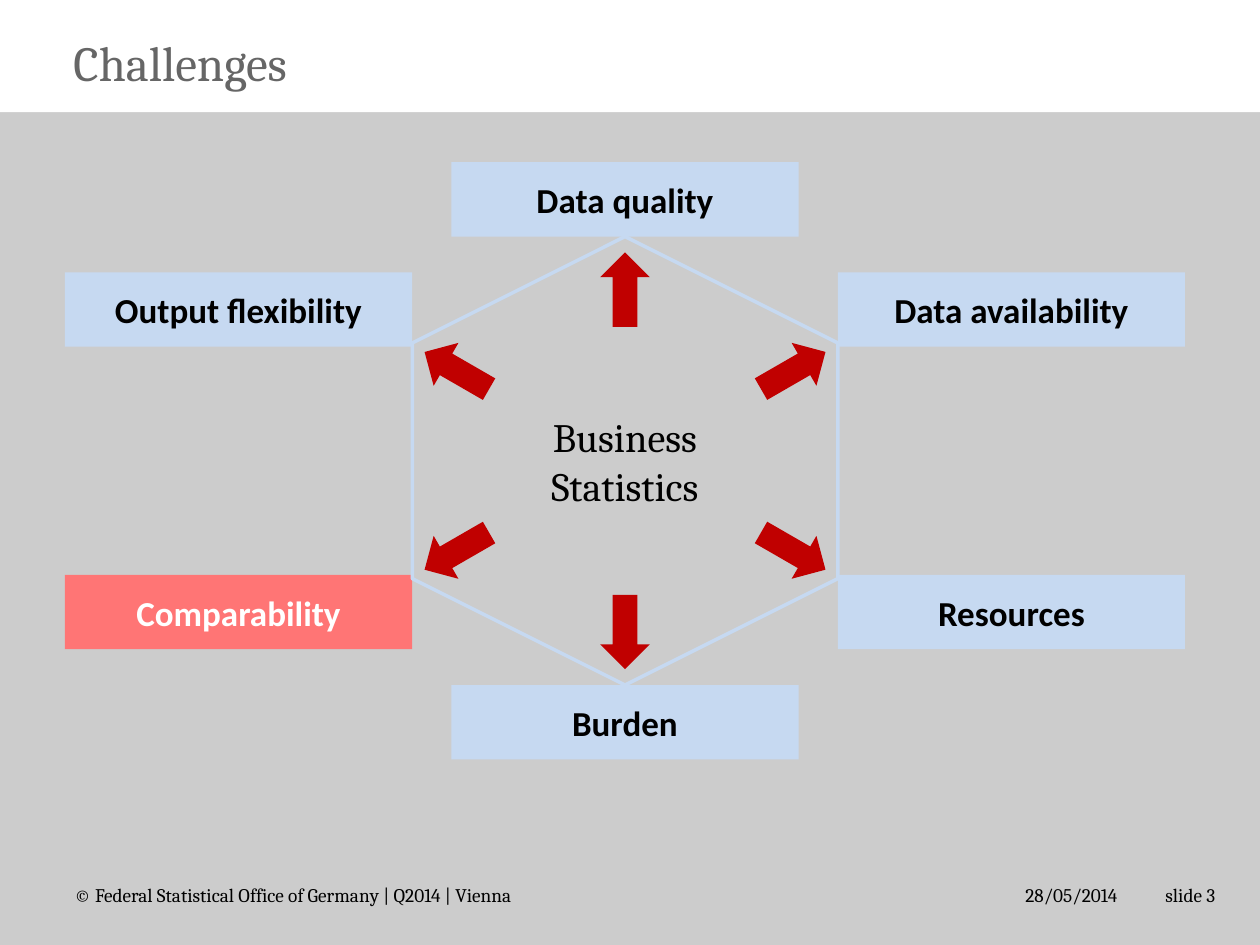
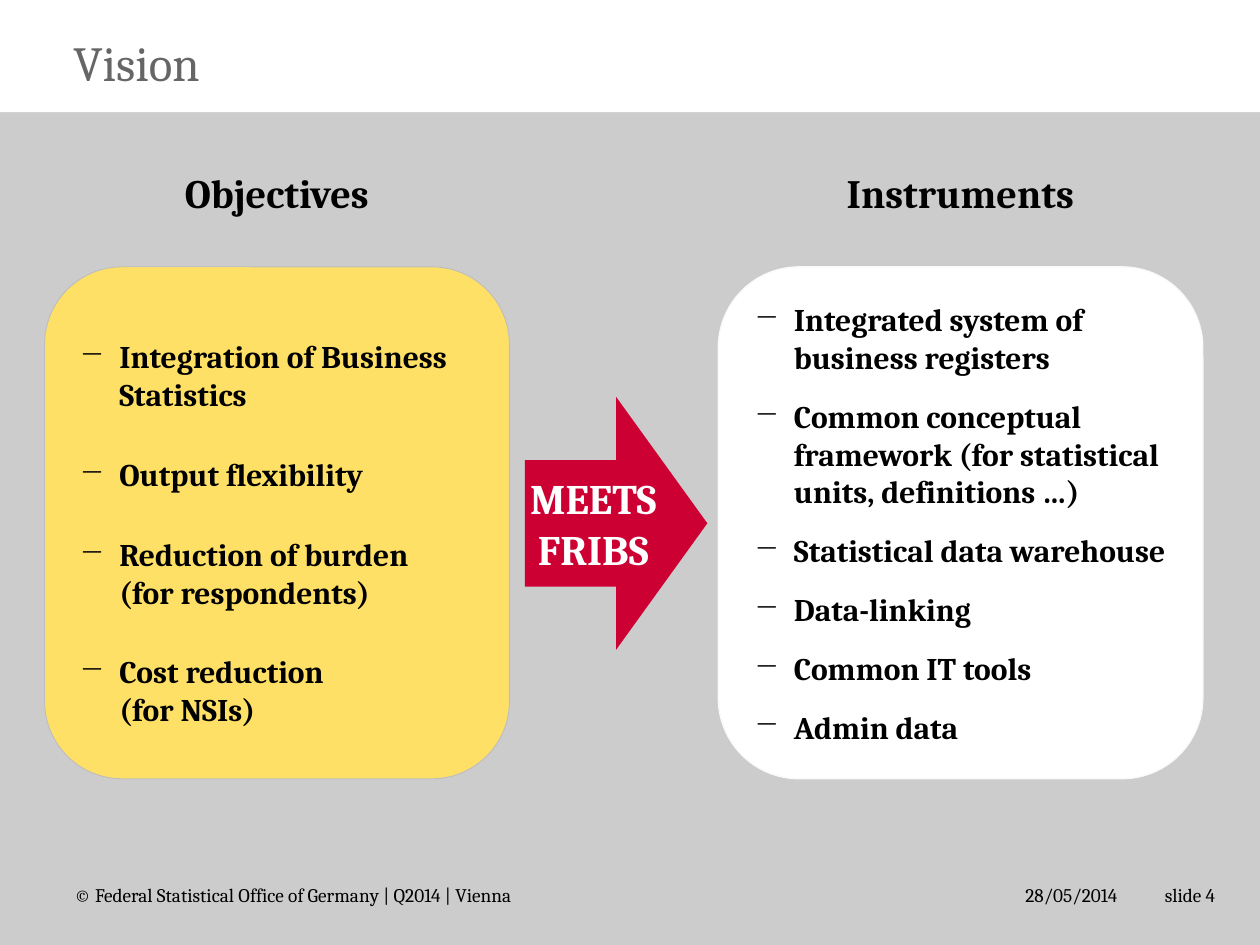
"""Build the Challenges and Vision slides on business statistics."""
from dataclasses import dataclass

import lxml.etree
import pptx
import pptx.dml.color
import pptx.enum.shapes
import pptx.enum.text
import pptx.oxml.ns
import pptx.util

Cm = pptx.util.Cm
Pt = pptx.util.Pt
Shape = pptx.enum.shapes.MSO_SHAPE
Align = pptx.enum.text.PP_ALIGN
Anchor = pptx.enum.text.MSO_ANCHOR


@dataclass(frozen=True)
class Theme:
    """Colours, fonts and type sizes of the slides."""

    background: str = "CCCCCC"
    white: str = "FFFFFF"
    black: str = "000000"
    title: str = "666666"
    topic: str = "C6D9F1"
    highlight: str = "FF7575"
    spoke: str = "C00000"
    objectives: str = "FFE066"
    objectives_edge: str = "BDBDBD"
    instruments_edge: str = "F9F9F9"
    meets: str = "CC0033"
    serif: str = "Cambria"
    sans: str = "Calibri"
    title_size: int = 28
    meets_size: int = 24
    heading_size: int = 23
    topic_size: int = 20
    list_size: int = 18
    footer_size: int = 11


THEME = Theme()
COPYRIGHT = "© Federal Statistical Office of Germany | Q2014 | Vienna"
DATE = "28/05/2014"

HUB_X, HUB_Y = 12.6, 9.29
TOPIC_SIZE = (7.0, 1.5)
SPOKE_SIZE = (1.0, 1.5)
HEXAGON_SIZE = (9.04, 8.58)
TOPICS = [
    ("Data quality", 0, -1),
    ("Data availability", 1, -1),
    ("Resources", 1, 1),
    ("Burden", 0, 1),
    ("Comparability", -1, 1),
    ("Output flexibility", -1, -1),
]
OBJECTIVES = [
    "Integration of Business Statistics",
    "Output flexibility",
    "Reduction of burden\n(for respondents)",
    "Cost reduction\n(for NSIs)",
]
INSTRUMENTS = [
    "Integrated system of business registers",
    "Common conceptual framework (for statistical units, definitions …)",
    "Statistical data warehouse",
    "Data-linking",
    "Common IT tools",
    "Admin data",
]


def rgb(value):
    """Return the colour for a hex string."""
    return pptx.dml.color.RGBColor.from_string(value)


def add_dash(paragraph, indent=0.8):
    """Give a paragraph a hanging dash."""
    properties = paragraph._p.get_or_add_pPr()
    properties.set("marL", str(Cm(indent)))
    properties.set("indent", str(-Cm(indent)))
    dash = lxml.etree.SubElement(properties, pptx.oxml.ns.qn("a:buChar"))
    dash.set("char", "−")


def write(shape, *paragraphs, size, font=THEME.serif, color=THEME.black,
          bold=False, align=Align.LEFT, anchor=Anchor.TOP,
          insets=(0, 0, 0, 0), gap=0, dashed=False):
    """Fill a shape with formatted paragraphs."""
    frame = shape.text_frame
    frame.word_wrap = True
    frame.auto_size = pptx.enum.text.MSO_AUTO_SIZE.NONE
    frame.vertical_anchor = anchor
    (frame.margin_left, frame.margin_top,
     frame.margin_right, frame.margin_bottom) = map(Cm, insets)
    for index, text in enumerate(paragraphs):
        paragraph = frame.add_paragraph() if index else frame.paragraphs[0]
        paragraph.text = text
        paragraph.alignment = align
        paragraph.space_before = Pt(gap if index else 0)
        if dashed:
            add_dash(paragraph)
        for run in paragraph.runs:
            run.font.name = font
            run.font.size = Pt(size)
            run.font.bold = bold
            run.font.color.rgb = rgb(color)


def add_label(slide, box, text, **text_format):
    """Add a text box; box is left, top, width, height in cm."""
    label = slide.shapes.add_textbox(*map(Cm, box))
    write(label, text, **text_format)


def add_figure(slide, kind, box, fill=None, line=None, line_width=1.0):
    """Add a flat preset shape; box is in cm."""
    figure = slide.shapes.add_shape(kind, *map(Cm, box))
    figure.shadow.inherit = False
    if fill:
        figure.fill.solid()
        figure.fill.fore_color.rgb = rgb(fill)
    else:
        figure.fill.background()
    if line:
        figure.line.color.rgb = rgb(line)
        figure.line.width = Pt(line_width)
    else:
        figure.line.fill.background()
    return figure


def around_hub(dx, dy, size):
    """Return the box of the given size centred at an offset from the hub."""
    width, height = size
    return HUB_X + dx - width / 2, HUB_Y + dy - height / 2, width, height


def add_page(deck, title, number):
    """Add a slide with band, title and footer."""
    slide = deck.slides.add_slide(deck.slide_layouts[5])
    slide.background.fill.solid()
    slide.background.fill.fore_color.rgb = rgb(THEME.background)
    band = add_figure(slide, Shape.RECTANGLE, (0, 0, 25.4, 2.26), THEME.white)
    slide.shapes._spTree.insert(2, band._element)

    heading = slide.shapes.title
    heading.left, heading.top = Cm(1.48), Cm(0.66)
    heading.width, heading.height = Cm(17.88), Cm(1.47)
    write(heading, title, size=THEME.title_size, color=THEME.title)

    for left, width, text, align in (
        (1.5, 11.63, COPYRIGHT, Align.LEFT),
        (19.81, 2.72, DATE, Align.RIGHT),
        (22.7, 1.8, f"slide {number}", Align.RIGHT),
    ):
        add_label(slide, (left, 17.53, width, 0.74), text, align=align,
                  size=THEME.footer_size, anchor=Anchor.BOTTOM)
    return slide


def add_topic(slide, text, column, row):
    """Add a topic box at its corner of the hexagon."""
    marked = text == "Comparability"
    offset = row * (3.05 if column else 5.27)
    topic = add_figure(slide, Shape.RECTANGLE,
                       around_hub(column * 7.79, offset, TOPIC_SIZE),
                       THEME.highlight if marked else THEME.topic)
    write(topic, text, size=THEME.topic_size, font=THEME.sans, bold=True,
          color=THEME.white if marked else THEME.black,
          align=Align.CENTER, anchor=Anchor.MIDDLE)


def add_spoke(slide, column, row, angle):
    """Add an arrow pointing from the hub to a topic."""
    offset = row * (1.82 if column else 3.45)
    spoke = add_figure(slide, Shape.UP_ARROW,
                       around_hub(column * 3.39, offset, SPOKE_SIZE),
                       THEME.spoke)
    spoke.rotation = angle


def add_panel(slide, left, width, heading, items, gap, top_inset, **style):
    """Add a heading above a rounded panel with a dashed list."""
    add_label(slide, (left, 3.4, width, 0.86), heading, bold=True,
              size=THEME.heading_size, align=Align.CENTER)
    panel = add_figure(slide, Shape.ROUNDED_RECTANGLE,
                       (left, 5.38, width, 10.32), **style)
    write(panel, *items, size=THEME.list_size, bold=True, gap=gap,
          anchor=Anchor.MIDDLE, insets=(0.25, top_inset, 0.25, 0.13),
          dashed=True)


def build_challenges(deck):
    """Build the hexagon of challenges."""
    slide = add_page(deck, "Challenges", 3)
    for topic in TOPICS:
        add_topic(slide, *topic)
    hexagon = add_figure(slide, Shape.HEXAGON, around_hub(0, 0, HEXAGON_SIZE),
                         line=THEME.topic, line_width=2)
    hexagon.rotation = 90
    for index, (_, column, row) in enumerate(TOPICS):
        add_spoke(slide, column, row, index * 60)
    add_label(slide, around_hub(0, 0, (3.8, 3.4)), "Business\nStatistics",
              size=THEME.heading_size, align=Align.CENTER,
              anchor=Anchor.MIDDLE)


def build_vision(deck):
    """Build the objectives and instruments panels."""
    slide = add_page(deck, "Vision", 4)
    add_panel(slide, 0.9, 9.37, "Objectives", OBJECTIVES, 24, 0.53,
              fill=THEME.objectives, line=THEME.objectives_edge,
              line_width=0.5)
    meets = add_figure(slide, Shape.RIGHT_ARROW, (10.58, 8, 3.68, 5.1),
                       THEME.meets)
    write(meets, "MEETS\nFRIBS", size=THEME.meets_size, color=THEME.white,
          bold=True, align=Align.CENTER, anchor=Anchor.MIDDLE,
          insets=(0, 0.13, 0, 0.13))
    add_panel(slide, 14.48, 9.77, "Instruments", INSTRUMENTS, 12, 0.13,
              fill=THEME.white, line=THEME.instruments_edge, line_width=0.75)


def main():
    """Create and save the deck."""
    deck = pptx.Presentation()
    deck.slide_width, deck.slide_height = Cm(25.4), Cm(19.05)
    build_challenges(deck)
    build_vision(deck)
    deck.save("out.pptx")


if __name__ == "__main__":
    main()
